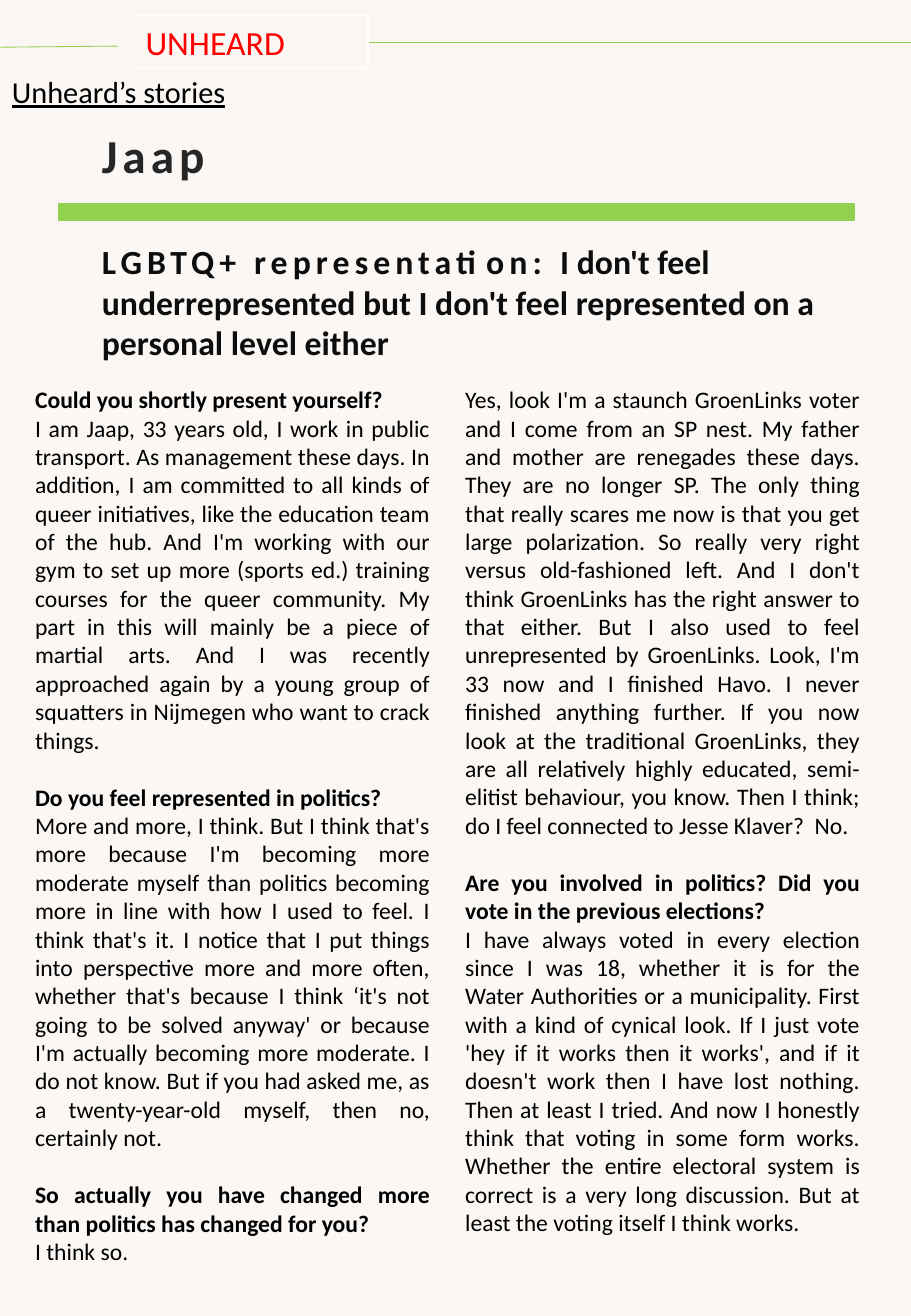
from pptx import Presentation
from pptx.dml.color import RGBColor
from pptx.enum import shapes, text
from pptx.oxml import ns
from pptx.util import Pt
from lxml import etree

FONT = "Calibri"
WIDE, HIGH = 540, 779.76
HEX = {"paper": "FAF7F4", "green": "92D050", "red": "FF0000", "white": "FFFFFF",
       "black": "000000", "name": "262626", "title": "0D0D0D"}

# Each column is a list of (question, answer); no question continues the story
LEFT = [
    ("Could you shortly present yourself?",
     "I am Jaap, 33 years old, I work in public transport. As management these days. "
     "In addition, I am committed to all kinds of queer initiatives, like the education "
     "team of the hub. And I'm working with our gym to set up more (sports ed.) training "
     "courses for the queer community. My part in this will mainly be a piece of martial "
     "arts. And I was recently approached again by a young group of squatters in Nijmegen "
     "who want to crack things."),
    ("Do you feel represented in politics?",
     "More and more, I think. But I think that's more because I'm becoming more moderate "
     "myself than politics becoming more in line with how I used to feel. I think that's "
     "it. I notice that I put things into perspective more and more often, whether that's "
     "because I think ‘it's not going to be solved anyway' or because I'm actually "
     "becoming more moderate. I do not know. But if you had asked me, as a "
     "twenty-year-old myself, then no, certainly not."),
    ("So actually you have changed more than politics has changed for you?",
     "I think so."),
]
RIGHT = [
    (None,
     "Yes, look I'm a staunch GroenLinks voter and I come from an SP nest. My father and "
     "mother are renegades these days. They are no longer SP. The only thing that really "
     "scares me now is that you get large polarization. So really very right versus "
     "old-fashioned left. And I don't think GroenLinks has the right answer to that "
     "either. But I also used to feel unrepresented by GroenLinks. Look, I'm 33 now and I "
     "finished Havo. I never finished anything further. If you now look at the "
     "traditional GroenLinks, they are all relatively highly educated, semi-elitist "
     "behaviour, you know. Then I think; do I feel connected to Jesse Klaver?  No."),
    ("Are you involved in politics? Did you vote in the previous elections?",
     "I have always voted in every election since I was 18, whether it is for the Water "
     "Authorities or a municipality. First with a kind of cynical look. If I just vote "
     "'hey if it works then it works', and if it doesn't work then I have lost nothing. "
     "Then at least I tried. And now I honestly think that voting in some form works. "
     "Whether the entire electoral system is correct is a very long discussion. But at "
     "least the voting itself I think works."),
]


def color(key):
    return RGBColor.from_string(HEX[key])


def write(par, words, size=14, ink="black", bold=False, line=False, track=0):
    run = par.add_run()
    run.text = words
    font = run.font
    font.name, font.size, font.bold, font.underline = FONT, Pt(size), bold, line
    font.color.rgb = color(ink)
    if track:
        run._r.get_or_add_rPr().set("spc", str(track * 100))


def frame(slide, x, y, w, h):
    body = slide.shapes.add_textbox(Pt(x), Pt(y), Pt(w), Pt(h)).text_frame
    body.word_wrap = True
    return body


def rect(slide, x, y, w, h, edge, width, fill=None):
    box = slide.shapes.add_shape(shapes.MSO_SHAPE.RECTANGLE, Pt(x), Pt(y), Pt(w), Pt(h))
    box.shadow.inherit = False
    if fill:
        box.fill.solid()
        box.fill.fore_color.rgb = color(fill)
    else:
        box.fill.background()
    box.line.color.rgb = color(edge)
    box.line.width = Pt(width)
    return box


def rule(slide, x1, y1, x2, y2):
    line = slide.shapes.add_connector(shapes.MSO_CONNECTOR.STRAIGHT,
                                      Pt(x1), Pt(y1), Pt(x2), Pt(y2))
    line.line.color.rgb = color("green")
    line.line.width = Pt(0.5)
    etree.SubElement(line._element.spPr, ns.qn("a:effectLst"))


def masthead(slide, x, y, w):
    # Magazine name between two thin rules
    rule(slide, x, y + 28, x + 70, y + 27.3)
    rule(slide, x + 218, y + 25.2, x + w, y + 25.2)
    label = rect(slide, x + 79.2, y + 9.2, 139, 31.6, "white", 0.75).text_frame
    label.word_wrap = True
    par = label.paragraphs[0]
    par.alignment = text.PP_ALIGN.LEFT
    write(par, "UNHEARD", size=20, ink="red")
    # Section name
    part = frame(slide, x, y + 39.6, 305, 29)
    write(part.paragraphs[0], "Unheard’s stories", size=18, line=True)


def headline(slide, x, y, w, h):
    # Name, with the title a blank line below it
    body = frame(slide, x + 16.6, y, w - 30, h)
    body.margin_left = Pt(44.2 - 0.4)
    body.margin_right = Pt(7.2)
    write(body.paragraphs[0], "Jaap", size=28, ink="name", bold=True, track=3)
    par = body.add_paragraph()
    par.space_before = Pt(34.2)
    write(par, "LGBTQ+ representation: ", size=20, ink="title", bold=True, track=3)
    write(par, "I don't feel underrepresented but I don't feel represented on a "
               "personal level either", size=20, ink="title", bold=True)
    # Green bar
    rect(slide, x + 34.6, y + 49.7, 471.6, 9.4, "green", 1, "green")


def column(slide, x, y, w, h, talk):
    body = frame(slide, x, y, w, h)
    pars = [(words, asked) for pair in talk
            for words, asked in zip(pair, (True, False)) if words]
    for i, (words, asked) in enumerate(pars):
        par = body.add_paragraph() if i else body.paragraphs[0]
        par.alignment = text.PP_ALIGN.JUSTIFY
        if i and asked:
            par.space_before = Pt(17)
        write(par, words, bold=asked)


def page(deck):
    slide = deck.slides.add_slide(deck.slide_layouts[6])
    slide.background.fill.solid()
    slide.background.fill.fore_color.rgb = color("paper")
    masthead(slide, 0, 0, WIDE)
    headline(slide, 0, 71.3, WIDE, 147.6)
    # Interview in two columns
    for i, talk in enumerate((LEFT, RIGHT)):
        column(slide, 13.7 + i * 254.9, 224.6, 248.4, 550, talk)


def main():
    deck = Presentation()
    deck.slide_width, deck.slide_height = Pt(WIDE), Pt(HIGH)
    page(deck)
    deck.save("out.pptx")


if __name__ == "__main__":
    main()
